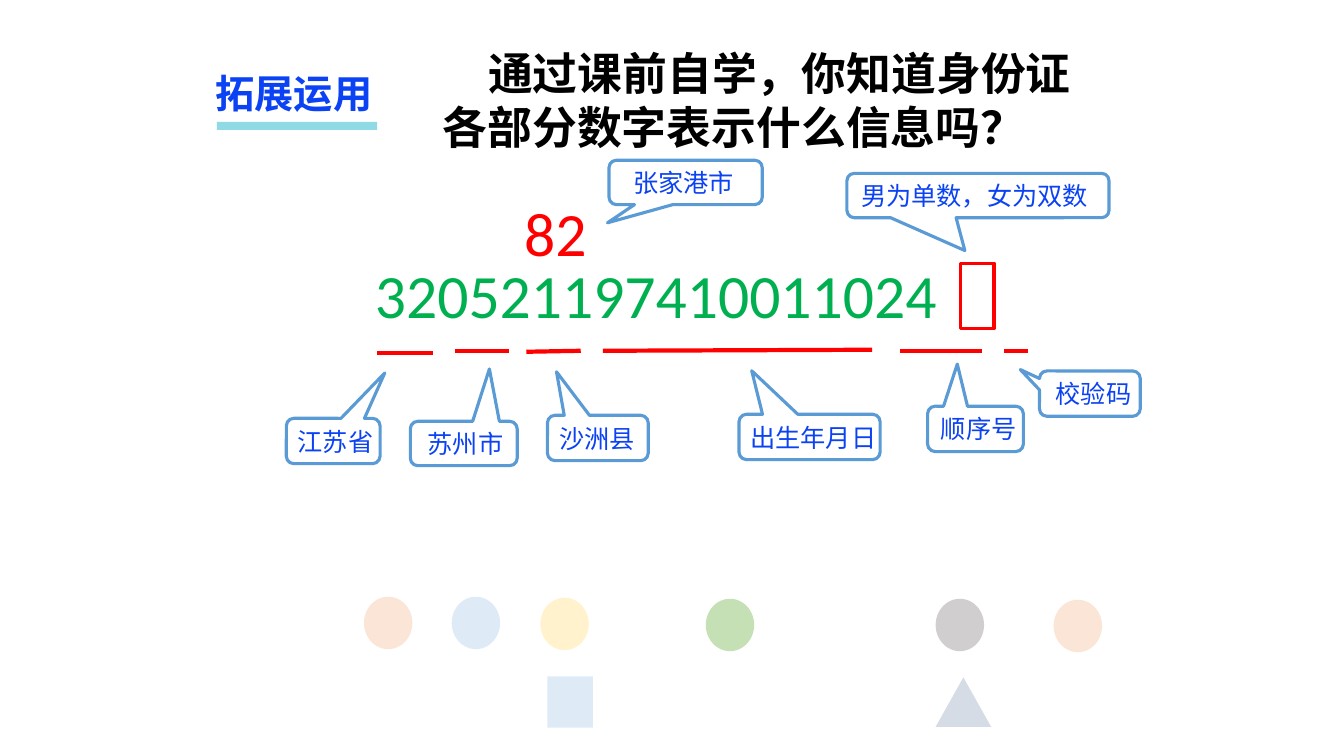
from lxml.etree import SubElement
from pptx import Presentation
from pptx.dml.color import RGBColor
from pptx.enum.shapes import MSO_CONNECTOR, MSO_SHAPE
from pptx.enum.text import MSO_ANCHOR, MSO_AUTO_SIZE, PP_ALIGN
from pptx.oxml.ns import qn
from pptx.util import Inches, Pt

BLUE = RGBColor(0x0B, 0x42, 0xF3)
EDGE = RGBColor(0x5B, 0x9B, 0xD5)
RED = RGBColor(0xFF, 0x00, 0x00)
GREEN = RGBColor(0x00, 0xB0, 0x50)
BLACK = RGBColor(0x00, 0x00, 0x00)
TEAL = RGBColor(0x4B, 0xC3, 0xD7)
PEACH = RGBColor(0xFB, 0xE5, 0xD6)
SKY = RGBColor(0xDE, 0xEB, 0xF7)
CREAM = RGBColor(0xFF, 0xF2, 0xCC)
LEAF = RGBColor(0xC5, 0xE0, 0xB4)
GREY = RGBColor(0xD0, 0xCE, 0xCE)
SLATE = RGBColor(0xD6, 0xDC, 0xE5)
LATIN = "Calibri"
HAN = "Noto Sans CJK SC"
COLS, ROWS = 133.3, 75


def write(frame, text, size=18, color=BLUE, bold=False, font=LATIN,
          align=PP_ALIGN.LEFT, anchor=MSO_ANCHOR.TOP, lead=None, indent=0):
    frame.word_wrap = True
    frame.auto_size = MSO_AUTO_SIZE.NONE
    frame.vertical_anchor = anchor
    para = frame.paragraphs[0]
    para.alignment = align
    if lead:
        para.line_spacing = Pt(lead)
    if indent:
        props = para._p.get_or_add_pPr()
        props.set("marL", "0")
        props.set("indent", str(indent))
    run = para.add_run()
    run.text = text
    run.font.size = Pt(size)
    run.font.bold = bold
    run.font.name = font
    run.font.color.rgb = color
    SubElement(run._r.get_or_add_rPr(), qn("a:ea"), typeface=HAN)


class Board:
    def __init__(self):
        self.deck = Presentation()
        self.deck.slide_width = Inches(13.33)
        self.deck.slide_height = Inches(7.5)
        self.slide = self.deck.slides.add_slide(self.deck.slide_layouts[5])
        self.shapes = self.slide.shapes

    def across(self, cols):
        return round(self.deck.slide_width * cols / COLS)

    def down(self, rows):
        return round(self.deck.slide_height * rows / ROWS)

    def area(self, left, top, width, height):
        return (self.across(left), self.down(top),
                self.across(width), self.down(height))

    def title(self, box, text, indent, **style):
        head = self.shapes.title
        head.left, head.top, head.width, head.height = self.area(*box)
        write(head.text_frame, text, indent=self.across(indent), **style)

    def text(self, box, text, **style):
        write(self.shapes.add_textbox(*self.area(*box)).text_frame, text, **style)

    def shape(self, kind, box, fill=None, line=None, alpha=None):
        item = self.shapes.add_shape(kind, *self.area(*box))
        item.shadow.inherit = False
        if fill is None:
            item.fill.background()
        else:
            item.fill.solid()
            item.fill.fore_color.rgb = fill
        if alpha:
            tint = item.fill._xPr.find(qn("a:solidFill"))[0]
            SubElement(tint, qn("a:alpha"), val=str(alpha * 1000))
        if line is None:
            item.line.fill.background()
        else:
            item.line.color.rgb = line
            item.line.width = Pt(2.25)
        return item

    def callout(self, label, box, tip, pad):
        item = self.shape(MSO_SHAPE.ROUNDED_RECTANGULAR_CALLOUT, box, line=EDGE)
        item.adjustments[0], item.adjustments[1] = tip
        frame = item.text_frame
        frame.margin_left = self.across(pad)
        frame.margin_right = frame.margin_top = frame.margin_bottom = 0
        write(frame, label, anchor=MSO_ANCHOR.MIDDLE)

    def dash(self, start, end, first, last):
        line = self.shapes.add_connector(
            MSO_CONNECTOR.STRAIGHT, self.across(start), self.down(first),
            self.across(end), self.down(last))
        line.line.color.rgb = RED
        line.line.width = Pt(3)
        SubElement(line._element.spPr, qn("a:effectLst"))


def main():
    board = Board()
    board.title((42.9, 4, 68.4, 11.8), "通过课前自学，你知道身份证各部分数字表示什么信息吗？",
                4.5, size=32, color=BLACK, bold=True, font=HAN, lead=38.5)
    board.shape(MSO_SHAPE.RECTANGLE, (21.5, 12.1, 15.9, 0.8), TEAL, alpha=61)
    board.text((20.4, 6.4, 21.5, 5.7), "拓展运用",
               size=28, bold=True, font=HAN, lead=33.6)
    for box, digits, color in (
            ((36.2, 25, 66.9, 8.4), "320521197410011024", GREEN),
            ((51, 18.8, 8.7, 8.4), "82", RED)):
        board.text(box, digits, size=44, color=color, align=PP_ALIGN.JUSTIFY)

    for dash in ((37.4, 42.9, 35, 35), (45.1, 50.5, 34.8, 34.8),
                 (52.2, 57.6, 34.9, 34.8), (59.8, 86.5, 34.8, 34.7),
                 (89.3, 97.4, 34.8, 34.8), (99.6, 102, 34.8, 34.8)):
        board.dash(*dash)

    board.shape(MSO_SHAPE.RECTANGLE, (95.3, 26.1, 3.3, 6.5), line=RED)
    for label, box, tip, pad in (
            ("江苏省", (28.4, 41.5, 9.3, 4.5), (0.55, -1.5), 0.9),
            ("苏州市", (40.7, 41.8, 10.6, 4.4), (0.24, -1.68), 1.5),
            ("沙洲县", (54.3, 41.2, 10, 4.5), (-0.41, -1.46), 1),
            ("张家港市", (60.4, 15.9, 15.2, 4.4), (-0.51, 0.91), 2.2),
            ("出生年月日", (73.3, 41.1, 14, 4.5), (-0.41, -1.46), 0.9),
            ("顺序号", (92, 40.3, 9.5, 4.5), (-0.19, -1.43), 1.1),
            ("男为单数，女为双数", (84, 17.2, 26, 4.4), (-0.05, 1.24), 1.2),
            ("校验码", (103.1, 36.8, 10, 4.5), (-0.69, -0.53), 1.4)):
        board.callout(label, box, tip, pad)

    for left, top, color in (
            (36.1, 59.2, PEACH), (44.8, 59.2, SKY), (53.6, 59.3, CREAM),
            (70, 59.4, LEAF), (92.8, 59.4, GREY), (104.5, 59.5, PEACH)):
        board.shape(MSO_SHAPE.OVAL, (left, top, 4.8, 5.2), color)
    board.shape(MSO_SHAPE.ISOSCELES_TRIANGLE, (92.8, 67.2, 5.5, 4.9), SLATE)
    board.shape(MSO_SHAPE.RECTANGLE, (54.3, 67.1, 4.5, 5.1), SKY)
    board.deck.save("out.pptx")


if __name__ == "__main__":
    main()
